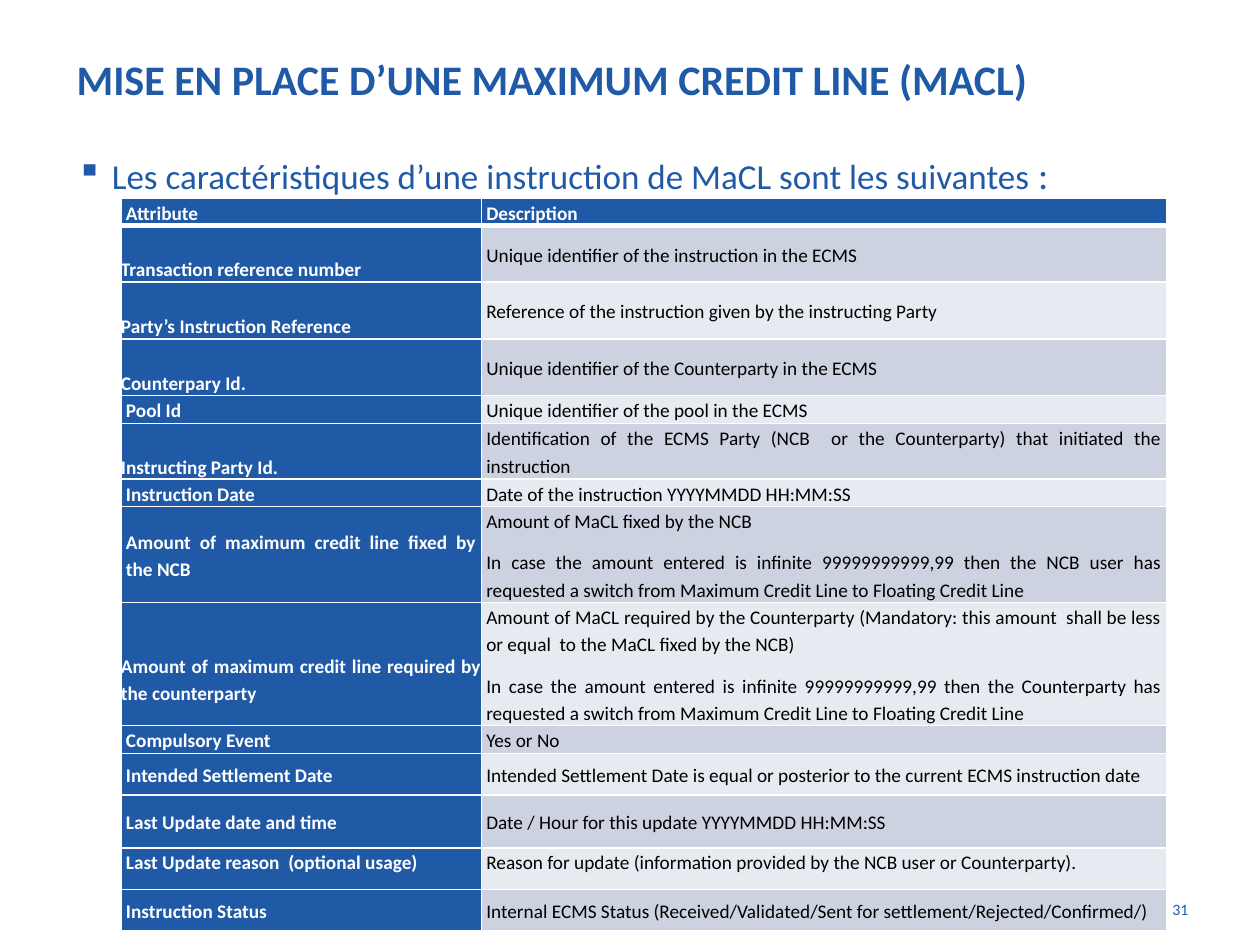
from lxml import etree
from pptx import Presentation
from pptx.dml.color import RGBColor
from pptx.enum.text import MSO_ANCHOR, PP_ALIGN
from pptx.oxml.ns import qn
from pptx.util import Inches, Pt

LEFT, RIGHT, JUSTIFY = PP_ALIGN.LEFT, PP_ALIGN.RIGHT, PP_ALIGN.JUSTIFY
TOP, MIDDLE = MSO_ANCHOR.TOP, MSO_ANCHOR.MIDDLE
BLUE = RGBColor(0x20, 0x5A, 0xA7)
WHITE = RGBColor(0xFF, 0xFF, 0xFF)
BLACK = RGBColor(0, 0, 0)
BANDS = [RGBColor(0xE8, 0xEA, 0xF1), RGBColor(0xCD, 0xD2, 0xE1)]
FONT = "Calibri"

# Content
TITLE = "MISE EN PLACE D’UNE MAXIMUM CREDIT LINE (MACL)"
INTRO = [("Les caractéristiques d’une instruction de MaCL sont les suivantes ", 20), (":", 22)]
PAGE = "31"
HEADER = ("Attribute", ["Description"], 0.22)
# attribute, description paragraphs, row height
ATTRIBUTES = [
    ("Transaction reference number", ["Unique identifier of the instruction in the ECMS"], 0.45),
    ("Party’s Instruction Reference",
     ["Reference of the instruction given by the instructing Party"], 0.45),
    ("Counterpary Id.", ["Unique identifier of the Counterparty in the ECMS"], 0.45),
    ("Pool Id", ["Unique identifier of the pool in the ECMS"], 0.22),
    ("Instructing Party Id.",
     ["Identification of the ECMS Party (NCB  or the Counterparty) that initiated the instruction"],
     0.44),
    ("Instruction Date", ["Date of the instruction YYYYMMDD HH:MM:SS"], 0.22),
    ("Amount of maximum credit line fixed by the NCB",
     ["Amount of MaCL fixed by the NCB",
      "In case the amount entered is infinite 99999999999,99 then the NCB user has requested "
      "a switch from Maximum Credit Line to Floating Credit Line"], 0.76),
    ("Amount of maximum credit line required by the counterparty",
     ["Amount of MaCL required by the Counterparty (Mandatory: this amount  shall be less "
      "or equal  to the MaCL fixed by the NCB)",
      "In case the amount entered is infinite 99999999999,99 then the Counterparty has requested "
      "a switch from Maximum Credit Line to Floating Credit Line"], 0.98),
    ("Compulsory Event", ["Yes or No"], 0.22),
    ("Intended Settlement Date",
     ["Intended Settlement Date is equal or posterior to the current ECMS instruction date"], 0.33),
    ("Last Update date and time", ["Date / Hour for this update YYYYMMDD HH:MM:SS"], 0.42),
    ("Last Update reason  (optional usage)",
     ["Reason for update (information provided by the NCB user or Counterparty)."], 0.33),
    ("Instruction Status",
     ["Internal ECMS Status (Received/Validated/Sent for settlement/Rejected/Confirmed/)"], 0.33),
]
LOWERED_ROWS = {1, 2, 3, 5, 8}  # attribute sits one line lower, flush left
TOP_ROW = 12
FIRST_LEFT_ROW = 9  # descriptions are left-aligned from here on
COLUMN_WIDTHS = (2.86, 5.44)


def add_run(paragraph, text, size, color, bold=False):
    run = paragraph.add_run()
    run.text = text
    font = run.font
    font.name, font.size, font.bold = FONT, Pt(size), bold
    font.color.rgb = color


def add_text(slide, box, runs, align=LEFT, anchor=TOP, bold=False):
    frame = slide.shapes.add_textbox(*map(Inches, box)).text_frame
    frame.word_wrap = True
    frame.vertical_anchor = anchor
    paragraph = frame.paragraphs[0]
    paragraph.alignment = align
    for text, size in runs:
        add_run(paragraph, text, size, BLUE, bold)
    return paragraph


def add_bullet(paragraph, indent):
    properties = paragraph._p.get_or_add_pPr()
    properties.set("marL", str(Inches(indent)))
    properties.set("indent", str(-Inches(indent)))
    etree.SubElement(properties, qn("a:buChar")).set("char", "▪")


def set_borders(cell, top, bottom):
    properties = cell._tc.get_or_add_tcPr()
    widths = {"a:lnL": 1, "a:lnR": 1, "a:lnT": top, "a:lnB": bottom}
    for position, (edge, width) in enumerate(widths.items()):
        line = etree.Element(qn(edge), w=str(Pt(width)))
        fill = etree.SubElement(line, qn("a:solidFill"))
        etree.SubElement(fill, qn("a:srgbClr")).set("val", str(WHITE))
        properties.insert(position, line)


def fill_cell(cell, paragraphs, row, column):
    lowered = column == 0 and row in LOWERED_ROWS
    on_blue = column == 0 or row == 0
    cell.margin_left = cell.margin_right = Inches(0 if lowered else 0.04)
    cell.margin_top = Inches(0.23 if lowered else 0)
    cell.margin_bottom = 0
    cell.vertical_anchor = TOP if row == TOP_ROW else MIDDLE
    cell.fill.solid()
    cell.fill.fore_color.rgb = BLUE if on_blue else BANDS[row % 2]
    set_borders(cell, top=3 if row == 1 else 1, bottom=3 if row == 0 else 1)
    frame = cell.text_frame
    for i, text in enumerate(paragraphs):
        paragraph = frame.add_paragraph() if i else frame.paragraphs[0]
        paragraph.alignment = LEFT if column and row >= FIRST_LEFT_ROW else JUSTIFY
        paragraph.line_spacing = 1.15
        paragraph.space_after = Pt(8)
        add_run(paragraph, text, 11, WHITE if on_blue else BLACK, on_blue)


def main():
    deck = Presentation()
    deck.slide_width, deck.slide_height = Inches(10), Inches(7.5)
    slide = deck.slides.add_slide(deck.slide_layouts[6])

    # Title, page number and introduction
    add_text(slide, (0.51, 0, 9, 1.25), [(TITLE, 24)], anchor=MIDDLE, bold=True)
    add_text(slide, (8.94, 7.09, 0.59, 0.39), [(PAGE, 9)], align=RIGHT)
    intro = add_text(slide, (0.51, 1.15, 9, 5.37), INTRO, align=JUSTIFY)
    add_bullet(intro, 0.28)

    # Attribute table
    rows = [HEADER] + ATTRIBUTES
    height = sum(row[2] for row in rows)
    table = slide.shapes.add_table(
        len(rows), len(COLUMN_WIDTHS), Inches(0.96), Inches(1.57),
        Inches(sum(COLUMN_WIDTHS)), Inches(height)).table
    for column, width in zip(table.columns, COLUMN_WIDTHS):
        column.width = Inches(width)
    for r, (attribute, description, row_height) in enumerate(rows):
        table.rows[r].height = Inches(row_height)
        for c, paragraphs in enumerate(([attribute], description)):
            fill_cell(table.cell(r, c), paragraphs, r, c)

    deck.save("out.pptx")


if __name__ == "__main__":
    main()
